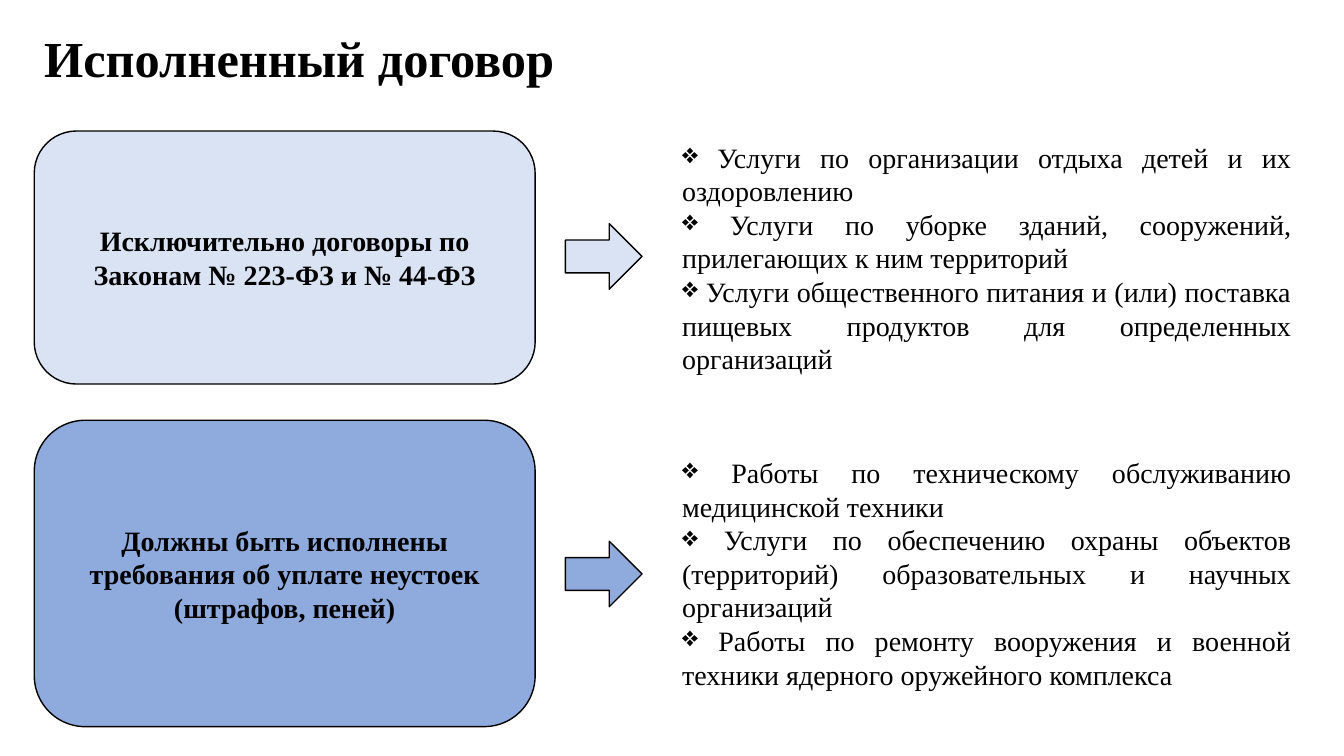
from lxml.etree import SubElement
from pptx import Presentation
from pptx.dml.color import RGBColor
from pptx.enum.shapes import MSO_SHAPE as Preset
from pptx.enum.text import MSO_ANCHOR as Anchor, PP_ALIGN as Align
from pptx.oxml.ns import qn
from pptx.util import Pt

COLORS = {"black": "000000", "pale": "DAE3F3", "blue": "8FAADC"}
FONT = "Times New Roman"

# Shape tops: condition box, arrow and list of each row
ROWS = [
    {
        "color": "pale", "box_top": 93.6, "box_height": 180.7,
        "arrow_top": 159.8, "list_top": 96.5,
        "condition": "Исключительно договоры по Законам № 223-ФЗ и № 44-ФЗ",
        "services": [
            " Услуги по организации отдыха детей и их оздоровлению",
            " Услуги по уборке зданий, сооружений, прилегающих к ним территорий",
            " Услуги общественного питания и (или) поставка пищевых продуктов "
            "для определенных организаций",
        ],
    },
    {
        "color": "blue", "box_top": 300.2, "box_height": 218.9,
        "arrow_top": 386.6, "list_top": 321.8,
        "condition": "Должны быть исполнены требования об уплате неустоек (штрафов, пеней)",
        "services": [
            " Работы по техническому обслуживанию медицинской техники",
            " Услуги по обеспечению охраны объектов (территорий) "
            "образовательных и научных организаций",
            " Работы по ремонту вооружения и военной техники "
            "ядерного оружейного комплекса",
        ],
    },
]


def write(para, text, size, align, bold=False):
    para.text = text
    para.alignment = align
    para.font.name = FONT
    para.font.size = Pt(size)
    para.font.bold = bold
    para.font.color.rgb = RGBColor.from_string(COLORS["black"])


def add_filled(page, preset, left, top, width, height, color):
    shape = page.shapes.add_shape(preset, Pt(left), Pt(top), Pt(width), Pt(height))
    shape.shadow.inherit = False
    shape.fill.solid()
    shape.fill.fore_color.rgb = RGBColor.from_string(COLORS[color])
    shape.line.color.rgb = RGBColor.from_string(COLORS["black"])
    shape.line.width = Pt(1)
    return shape


deck = Presentation()
deck.slide_width, deck.slide_height = Pt(960), Pt(540)
page = deck.slides.add_slide(deck.slide_layouts[6])

# Title
title = page.shapes.add_textbox(Pt(24.5), Pt(5.8), Pt(828), Pt(75.6))
title.text_frame.word_wrap = True
title.text_frame.vertical_anchor = Anchor.MIDDLE
heading = title.text_frame.paragraphs[0]
write(heading, "Исполненный договор", 36, Align.LEFT, bold=True)
heading.line_spacing = 0.9

for row in ROWS:
    # Condition box
    box = add_filled(page, Preset.ROUNDED_RECTANGLE, 24.5, row["box_top"],
                     357.8, row["box_height"], row["color"])
    box.text_frame.word_wrap = True
    box.text_frame.vertical_anchor = Anchor.MIDDLE
    write(box.text_frame.paragraphs[0], row["condition"], 20, Align.CENTER, bold=True)

    # Arrow to the list
    add_filled(page, Preset.RIGHT_ARROW, 403.9, row["arrow_top"], 54.7, 46.8, row["color"])

    # Bulleted list of services
    services = page.shapes.add_textbox(Pt(480.2), Pt(row["list_top"]), Pt(449.3), Pt(177.1))
    frame = services.text_frame
    frame.word_wrap = True
    for index, service in enumerate(row["services"]):
        para = frame.add_paragraph() if index else frame.paragraphs[0]
        write(para, service, 20, Align.JUSTIFY)
        properties = para._p.get_or_add_pPr()
        properties.set("marL", "0")
        properties.set("indent", "0")
        bullet = SubElement(properties, qn("a:buChar"), char="❖")
        properties.find(qn("a:defRPr")).addprevious(bullet)

deck.save("out.pptx")
